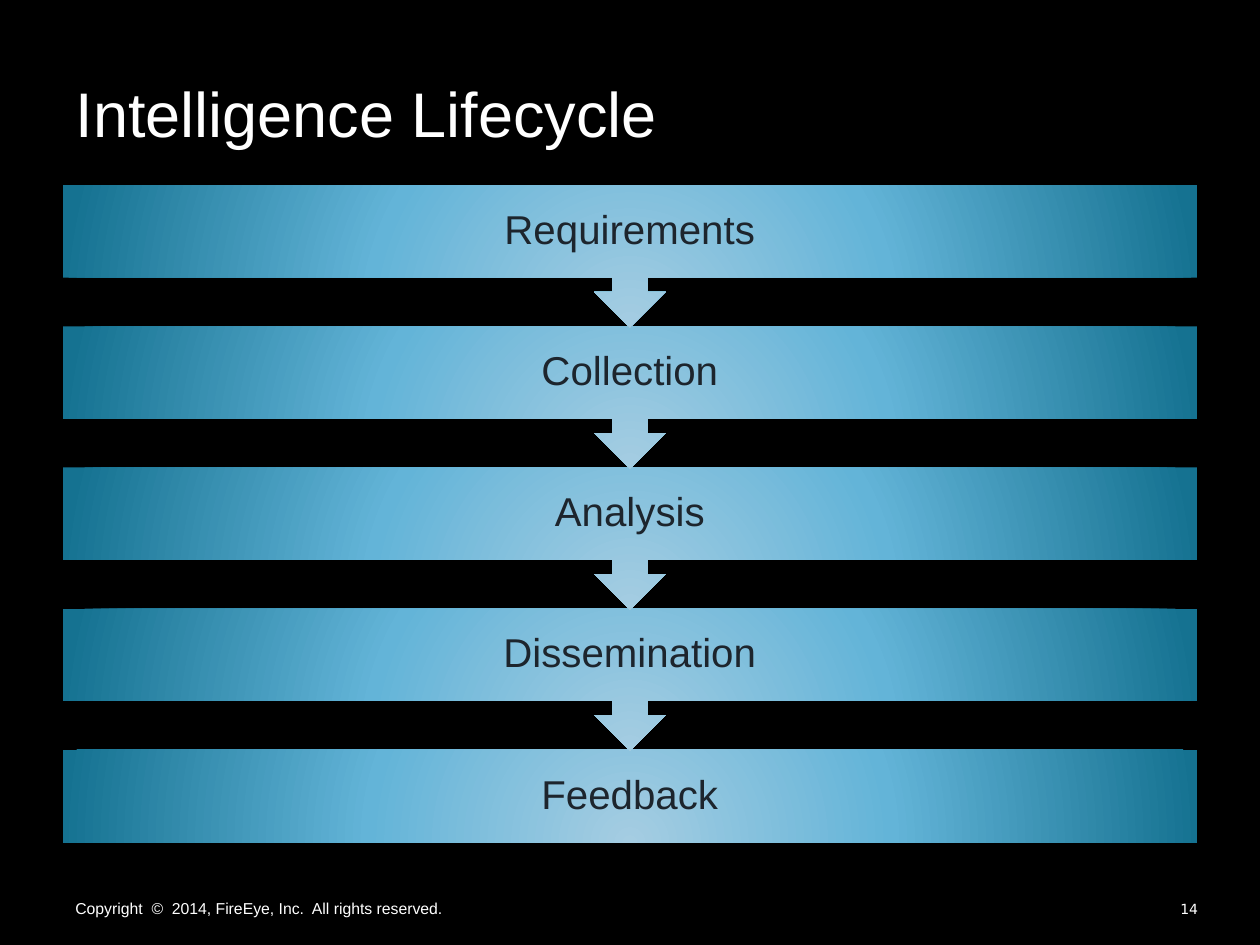
from pptx import Presentation
from pptx.dml.color import RGBColor
from pptx.enum.shapes import MSO_SHAPE as Shape
from pptx.enum.text import MSO_ANCHOR as Anchor, PP_ALIGN as Align
from pptx.oxml import parse_xml
from pptx.oxml.ns import nsdecls
from pptx.util import Inches, Pt

STAGES = ["Requirements", "Collection", "Analysis", "Dissemination", "Feedback"]
GRADIENT = [(0, "A5CDE2"), (46, "63B4D8"), (100, "157291")]
STAGE_STEP = 1.12
CALLOUT_HEIGHT = 1.13
BAR_HEIGHT = 0.74


def rgb(color):
    return RGBColor.from_string(color)


def write(shape, text, size, color="FFFFFF", font="Arial", align=Align.LEFT,
          anchor=Anchor.TOP, insets=(0.1, 0.05), line_spacing=None):
    frame = shape.text_frame
    frame.word_wrap = True
    frame.vertical_anchor = anchor
    frame.margin_left = frame.margin_right = Inches(insets[0])
    frame.margin_top = frame.margin_bottom = Inches(insets[1])
    frame.text = text
    paragraph = frame.paragraphs[0]
    paragraph.alignment = align
    paragraph.line_spacing = line_spacing
    paragraph.font.size = Pt(size)
    paragraph.font.name = font
    paragraph.font.color.rgb = rgb(color)


def fill_radial(shape):
    """Radial gradient whose centre lies below the shape."""
    stops = "".join(
        f'<a:gs pos="{percent * 1000}"><a:srgbClr val="{color}"/></a:gs>'
        for percent, color in GRADIENT)
    gradient = parse_xml(
        f'<a:gradFill {nsdecls("a")} rotWithShape="1"><a:gsLst>{stops}</a:gsLst>'
        '<a:path path="circle">'
        '<a:fillToRect l="50000" t="155000" r="50000" b="-55000"/>'
        '</a:path></a:gradFill>')
    shape.line.fill.background()
    shape.shadow.inherit = False
    shape._element.spPr.prstGeom.addnext(gradient)


def add_title(slide, left, top, width, height):
    title = slide.shapes.title
    title.left, title.top = Inches(left), Inches(top)
    title.width, title.height = Inches(width), Inches(height)
    write(title, "Intelligence Lifecycle", 36, anchor=Anchor.BOTTOM, insets=(0.1, 0))


def add_lifecycle(slide, left, top, width):
    # Bottom stage first, so that each arrow tip lies over the next bar
    for index, stage in reversed(list(enumerate(STAGES))):
        is_last = index == len(STAGES) - 1
        kind = Shape.RECTANGLE if is_last else Shape.DOWN_ARROW_CALLOUT
        height = BAR_HEIGHT if is_last else CALLOUT_HEIGHT
        bar = slide.shapes.add_shape(
            kind, Inches(left), Inches(top + index * STAGE_STEP),
            Inches(width), Inches(height))
        fill_radial(bar)
        write(bar, stage, 23, "1D252D", align=Align.CENTER, anchor=Anchor.MIDDLE,
              insets=(0.18, 0.18), line_spacing=0.9)


def add_footer(slide, left, top, width):
    copyright_line = slide.shapes.add_textbox(
        Inches(left), Inches(top + 0.03), Inches(6.67), Inches(0.25))
    write(copyright_line, "Copyright  ©  2014, FireEye, Inc.  All rights reserved.", 9)

    number_width = 4.16
    page_number = slide.shapes.add_textbox(
        Inches(left + width - number_width), Inches(top),
        Inches(number_width), Inches(0.33))
    write(page_number, "14", 8, font="DejaVu Sans", align=Align.RIGHT,
          anchor=Anchor.MIDDLE, insets=(0, 0))


def main():
    deck = Presentation()
    deck.slide_width, deck.slide_height = Inches(10), Inches(7.5)
    slide = deck.slides.add_slide(deck.slide_layouts[5])
    slide.background.fill.solid()
    slide.background.fill.fore_color.rgb = rgb("000000")

    add_footer(slide, 0.5, 7.05, 9.01)
    add_title(slide, 0.5, 0.29, 9, 0.9)
    add_lifecycle(slide, 0.5, 1.47, 9)
    deck.save("out.pptx")


if __name__ == "__main__":
    main()
